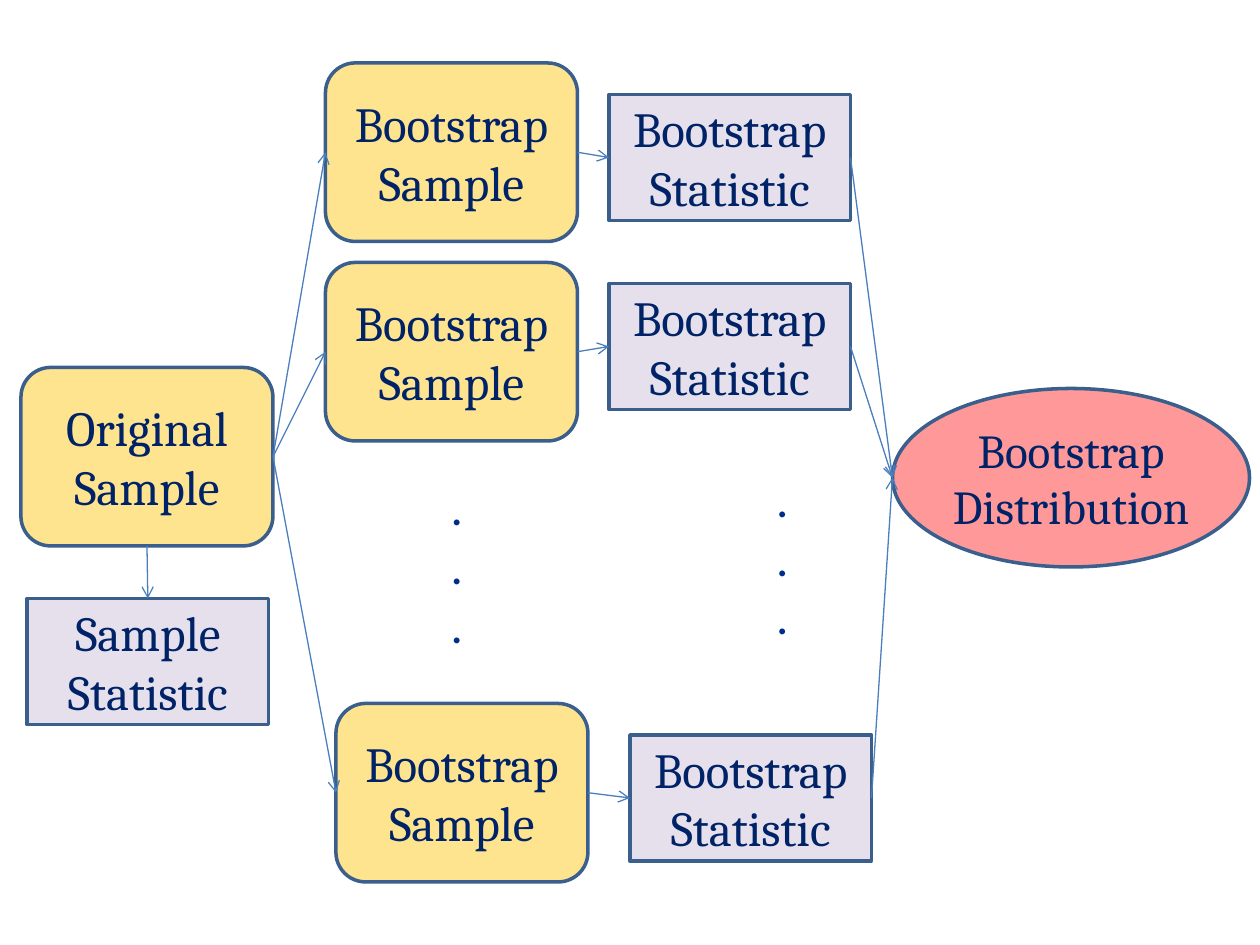
from dataclasses import dataclass

from pptx import Presentation
from pptx.dml.color import RGBColor
from pptx.enum.shapes import MSO_CONNECTOR, MSO_SHAPE
from pptx.enum.text import MSO_ANCHOR, MSO_AUTO_SIZE, PP_ALIGN
from pptx.oxml.ns import qn
from pptx.util import Pt
from lxml.etree import SubElement

TOP, LEFT, BOTTOM, RIGHT = range(4)


@dataclass(frozen=True)
class Theme:
    """Colours, fonts and sizes of the slide."""
    sample: str = "FFE48F"
    statistic: str = "E6E0EC"
    distribution: str = "FF9999"
    outline: str = "3A5F8C"
    arrow: str = "4B7EBC"
    text: str = "002267"
    dots: str = "002D89"
    font: str = "Cambria"
    dots_font: str = "Calibri"
    size: int = 28
    distribution_size: int = 27


THEME = Theme()


def rgb(value):
    """Turn a hex string into a colour."""
    return RGBColor.from_string(value)


def write(sp, text, font=THEME.font, size=THEME.size, color=THEME.text,
          anchor=MSO_ANCHOR.MIDDLE):
    """Fill a shape with centred, formatted text."""
    tf = sp.text_frame
    tf.word_wrap = True
    tf.vertical_anchor = anchor
    tf.text = text
    for p in tf.paragraphs:
        p.alignment = PP_ALIGN.CENTER
        for r in p.runs:
            r.font.name, r.font.size = font, Pt(size)
            r.font.color.rgb = rgb(color)


def add_box(s, kind, text, x, y, w, h, fill, **text_format):
    """Add an outlined, filled shape with text."""
    sp = s.shapes.add_shape(kind, Pt(x), Pt(y), Pt(w), Pt(h))
    sp.shadow.inherit = False
    sp.fill.solid()
    sp.fill.fore_color.rgb = rgb(fill)
    sp.line.color.rgb = rgb(THEME.outline)
    sp.line.width = Pt(2)
    write(sp, text, **text_format)
    return sp


def add_sample(s, text, x, y):
    """Add a rounded sample box."""
    return add_box(s, MSO_SHAPE.ROUNDED_RECTANGLE, text, x, y, 144, 102,
                   THEME.sample)


def add_statistic(s, text, x, y):
    """Add a rectangular statistic box."""
    return add_box(s, MSO_SHAPE.RECTANGLE, text, x, y, 138, 72,
                   THEME.statistic)


def add_distribution(s, text, x, y):
    """Add the distribution ellipse."""
    sp = add_box(s, MSO_SHAPE.OVAL, text, x, y, 204, 102, THEME.distribution,
                 size=THEME.distribution_size)
    tf = sp.text_frame
    tf.margin_left = tf.margin_right = tf.margin_top = tf.margin_bottom = 0
    return sp


def add_dots(s, x, y):
    """Add a vertical ellipsis of three dots."""
    sp = s.shapes.add_textbox(Pt(x), Pt(y), Pt(90), Pt(108.7))
    write(sp, "\n".join("..."), font=THEME.dots_font, color=THEME.dots,
          anchor=MSO_ANCHOR.TOP)
    sp.text_frame.auto_size = MSO_AUTO_SIZE.SHAPE_TO_FIT_TEXT


def add_arrow(s, source, side, target=None, target_side=LEFT, end=(0, 0)):
    """Add an arrow from a box side to another box side or a free point."""
    line = s.shapes.add_connector(MSO_CONNECTOR.STRAIGHT, 0, 0, *end)
    line.begin_connect(source, side)
    if target is not None:
        line.end_connect(target, target_side)
    line.line.color.rgb = rgb(THEME.arrow)
    line.line.width = Pt(0.75)
    SubElement(line.line._get_or_add_ln(), qn("a:tailEnd"), type="arrow")
    SubElement(line._element.spPr, qn("a:effectLst"))


def main():
    """Build the bootstrap diagram."""
    prs = Presentation()
    prs.slide_width, prs.slide_height = Pt(720), Pt(540)
    s = prs.slides.add_slide(prs.slide_layouts[6])

    original = add_sample(s, "Original Sample", 12, 210)
    statistic = add_statistic(s, "Sample Statistic", 15.5, 342)
    add_arrow(s, original, BOTTOM, statistic, TOP)

    distribution = add_distribution(s, "Bootstrap Distribution", 510, 222)
    left_tip = (distribution.left, distribution.top + distribution.height // 2)

    rows = [((186, 36), (348, 54)),
            ((186, 150), (348, 162)),
            ((192, 402), (360, 420))]
    for sample_at, statistic_at in rows:
        sample = add_sample(s, "Bootstrap\vSample", *sample_at)
        statistic = add_statistic(s, "Bootstrap Statistic", *statistic_at)
        add_arrow(s, original, RIGHT, sample)
        add_arrow(s, sample, RIGHT, statistic)
        add_arrow(s, statistic, RIGHT, end=left_tip)

    add_dots(s, 216, 269)
    add_dots(s, 402, 264)
    prs.save("out.pptx")


if __name__ == "__main__":
    main()
